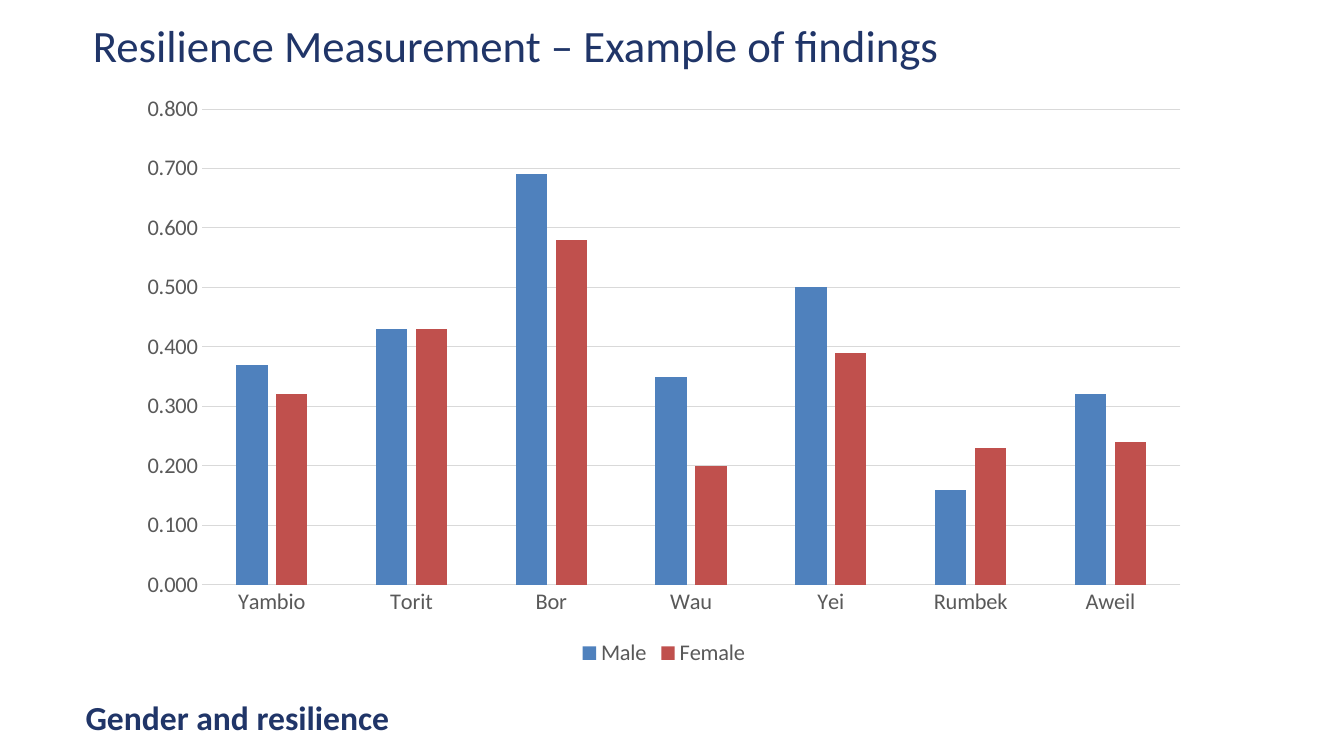
import pptx
import pptx.chart.data
import pptx.dml.color
import pptx.enum.chart
import pptx.enum.text
import pptx.util
from dataclasses import dataclass
from pptx.util import Inches


@dataclass(frozen=True)
class Theme:
    font: str = "Calibri"
    navy: str = "203568"
    gray: str = "595959"
    rule: str = "D9D9D9"
    male: str = "4F81BD"
    female: str = "C0504D"
    title_size: int = 32
    caption_size: int = 24
    chart_size: int = 16


theme = Theme()


def set_font(font, size, color, bold=False):
    font.name = theme.font
    font.size = pptx.util.Pt(size)
    font.bold = bold
    font.color.rgb = pptx.dml.color.RGBColor.from_string(color)


def set_line(line):
    line.width = pptx.util.Pt(0.75)
    line.color.rgb = pptx.dml.color.RGBColor.from_string(theme.rule)


deck = pptx.Presentation()
deck.slide_width, deck.slide_height = Inches(13.33), Inches(7.5)
page = deck.slides.add_slide(deck.slide_layouts[5])

# Title
title = page.shapes.title
title.left, title.top = Inches(0.92), Inches(0.17)
title.width, title.height = Inches(11.58), Inches(0.55)
frame = title.text_frame
frame.margin_left = frame.margin_right = frame.margin_top = frame.margin_bottom = 0
frame.vertical_anchor = pptx.enum.text.MSO_ANCHOR.MIDDLE
frame.auto_size = pptx.enum.text.MSO_AUTO_SIZE.NONE
frame.text = "Resilience Measurement – Example of findings"
frame.paragraphs[0].alignment = pptx.enum.text.PP_ALIGN.LEFT
set_font(frame.paragraphs[0].font, theme.title_size, theme.navy)

# Caption
caption = page.shapes.add_textbox(Inches(0.75), Inches(6.79), Inches(12.41), Inches(0.65))
frame = caption.text_frame
frame.word_wrap = True
frame.vertical_anchor = pptx.enum.text.MSO_ANCHOR.MIDDLE
frame.text = "Gender and resilience"
set_font(frame.paragraphs[0].font, theme.caption_size, theme.navy, bold=True)

# Chart data
scores = pptx.chart.data.CategoryChartData(number_format="0.000")
scores.categories = ["Yambio", "Torit", "Bor", "Wau", "Yei", "Rumbek", "Aweil"]
scores.add_series("Male", [0.37, 0.43, 0.69, 0.35, 0.5, 0.16, 0.32])
scores.add_series("Female", [0.32, 0.43, 0.58, 0.2, 0.39, 0.23, 0.24])

# Column chart
chart = page.shapes.add_chart(
    pptx.enum.chart.XL_CHART_TYPE.COLUMN_CLUSTERED,
    Inches(1.25), Inches(0.83), Inches(10.67), Inches(5.83), scores,
).chart
chart.has_title = False
set_font(chart.font, theme.chart_size, theme.gray)
plot = chart.plots[0]
plot.gap_width, plot.overlap = 219, -27
plot.vary_by_categories = False
for series, color in zip(plot.series, (theme.male, theme.female)):
    series.format.fill.solid()
    series.format.fill.fore_color.rgb = pptx.dml.color.RGBColor.from_string(color)

# Axes
for axis in (chart.category_axis, chart.value_axis):
    axis.major_tick_mark = axis.minor_tick_mark = pptx.enum.chart.XL_TICK_MARK.NONE
    set_font(axis.tick_labels.font, theme.chart_size, theme.gray)
set_line(chart.category_axis.format.line)
values = chart.value_axis
values.minimum_scale, values.maximum_scale, values.major_unit = 0, 0.8, 0.1
values.tick_labels.number_format = "0.000"
values.tick_labels.number_format_is_linked = False
values.format.line.fill.background()
values.has_major_gridlines = True
set_line(values.major_gridlines.format.line)

# Legend
chart.has_legend = True
chart.legend.position = pptx.enum.chart.XL_LEGEND_POSITION.BOTTOM
chart.legend.include_in_layout = False
set_font(chart.legend.font, theme.chart_size, theme.gray)

deck.save("out.pptx")
